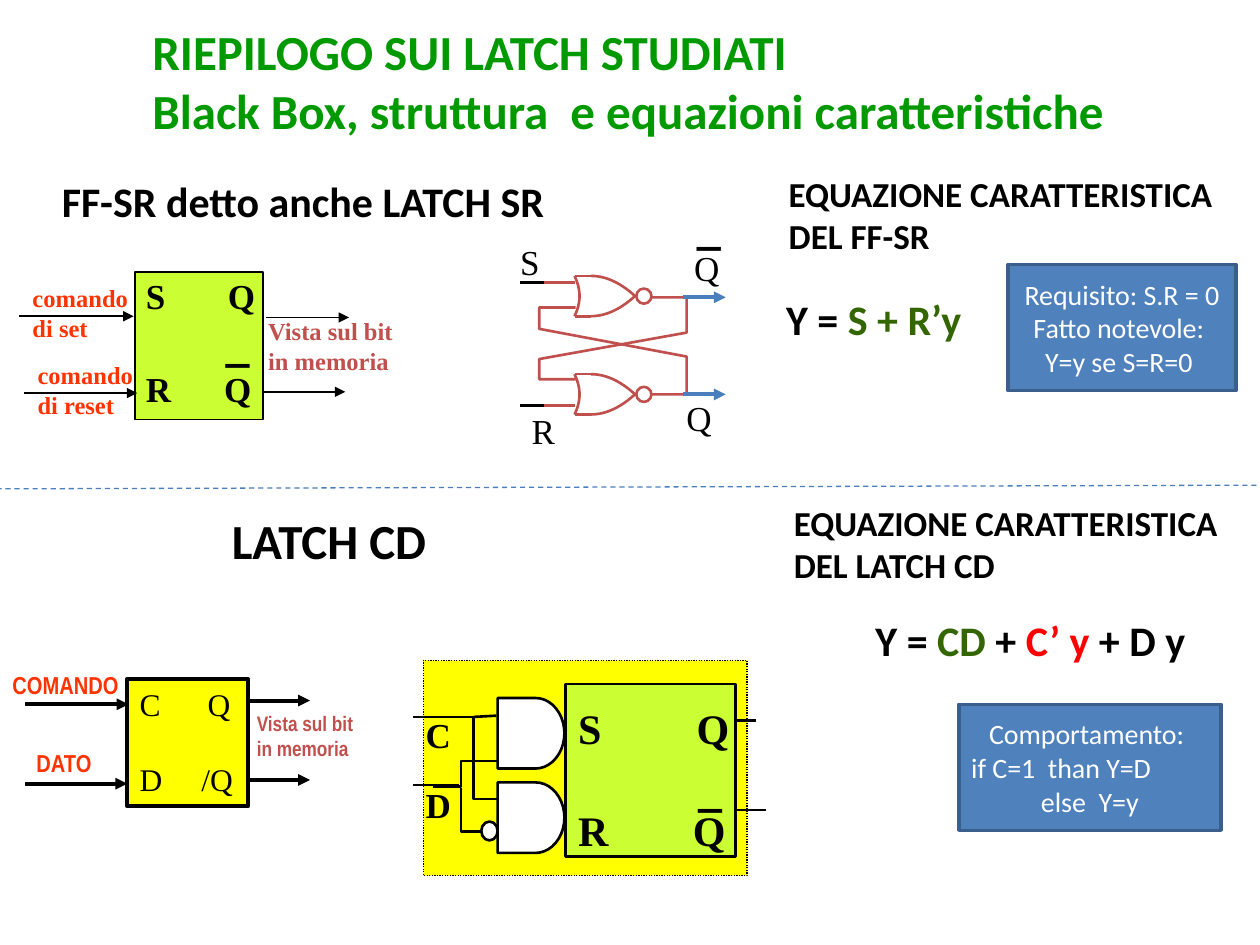
from dataclasses import dataclass
from math import cos, pi, sin

from lxml import etree
from pptx import Presentation
from pptx.dml.color import RGBColor
from pptx.enum.dml import MSO_LINE
from pptx.enum.shapes import MSO_CONNECTOR, MSO_SHAPE
from pptx.enum.text import MSO_ANCHOR, MSO_AUTO_SIZE, PP_ALIGN
from pptx.oxml.ns import qn
from pptx.util import Cm, Pt

RECT, OVAL = MSO_SHAPE.RECTANGLE, MSO_SHAPE.OVAL
STRAIGHT = MSO_CONNECTOR.STRAIGHT
DASH, DOT = MSO_LINE.DASH, MSO_LINE.ROUND_DOT
TOP, MIDDLE = MSO_ANCHOR.TOP, MSO_ANCHOR.MIDDLE
LEFT, CENTER = PP_ALIGN.LEFT, PP_ALIGN.CENTER
GROW = MSO_AUTO_SIZE.SHAPE_TO_FIT_TEXT
CM_PER_INCH = 2.54


@dataclass(frozen=True)
class Theme:
    sans: str = "Calibri"
    serif: str = "Times New Roman"
    narrow: str = "Arial Narrow"
    black: str = "000000"
    white: str = "FFFFFF"
    title: str = "009900"
    green: str = "336600"
    red: str = "FF0000"
    command: str = "FF3300"
    gate: str = "C0504D"
    lime: str = "CCFF33"
    yellow: str = "FFFF00"
    note: str = "4F81BD"
    note_edge: str = "3A5F8C"
    output: str = "4B7EBC"
    huge: int = 28
    large: int = 24
    medium: int = 20
    pin: int = 18
    body: int = 16
    label: int = 14
    small: int = 12


@dataclass(frozen=True)
class Label:
    text: str
    x: float
    y: float
    w: float
    h: float
    fmt: dict


T = Theme()
prs = Presentation()
prs.slide_width, prs.slide_height = Cm(25.4), Cm(19.05)
shapes = prs.slides.add_slide(prs.slide_layouts[6]).shapes


def size(v: float) -> int:
    return Cm(v * CM_PER_INCH)


def rgb(color: str) -> RGBColor:
    return RGBColor.from_string(color)


def write(tf, text, *, pt=T.label, font=T.sans, color=T.black, bold=False,
          align=LEFT, anchor=TOP, inset=True, wrap=True, gap=0, tabs=()) -> None:
    tf.word_wrap, tf.vertical_anchor = wrap, anchor
    if not inset:
        tf.margin_left = tf.margin_right = tf.margin_top = tf.margin_bottom = 0
    lines = text.split("\n") if isinstance(text, str) else [text]
    for i, line in enumerate(lines):
        p = tf.paragraphs[0] if i == 0 else tf.add_paragraph()
        p.alignment = align[i] if isinstance(align, tuple) else align
        if i and gap:
            p.space_before = Pt(gap)
        if tabs:
            tab_list = etree.SubElement(p._p.get_or_add_pPr(), qn("a:tabLst"))
            etree.SubElement(tab_list, qn("a:tab"), pos=str(size(tabs[i])), algn="l")
        for words, tint in [(line, color)] if isinstance(line, str) else line:
            r = p.add_run()
            r.text = words
            r.font.name, r.font.size, r.font.bold = font, Pt(pt), bold
            r.font.color.rgb = rgb(tint)


def add_text(text, x: float, y: float, w: float, h: float, **fmt) -> None:
    tf = shapes.add_textbox(*map(size, (x, y, w, h))).text_frame
    tf.auto_size = GROW
    write(tf, text, **fmt)


def style(s, fill: str | None, edge: str, width: float):
    s.shadow.inherit = False
    if fill:
        s.fill.solid()
        s.fill.fore_color.rgb = rgb(fill)
    else:
        s.fill.background()
    s.line.color.rgb, s.line.width = rgb(edge), Pt(width)
    return s


def add_box(x: float, y: float, w: float, h: float, fill: str | None,
            edge: str = T.black, width: float = 1.5, kind=RECT):
    return style(shapes.add_shape(kind, *map(size, (x, y, w, h))), fill, edge, width)


def add_line(x1: float, y1: float, x2: float, y2: float, color: str = T.black,
             width: float = 1.5, arrow: bool = False, dash=None) -> None:
    s = shapes.add_connector(STRAIGHT, *map(size, (x1, y1, x2, y2)))
    s.line.color.rgb, s.line.width = rgb(color), Pt(width)
    if dash:
        s.line.dash_style = dash
    if arrow:
        etree.SubElement(s.line._get_or_add_ln(), qn("a:tailEnd"), type="triangle")
    etree.SubElement(s._element.spPr, qn("a:effectLst"))


def add_path(points: list, color: str = T.black, fill: str | None = None,
             close: bool = False) -> None:
    pts = [(size(x), size(y)) for x, y in points]
    builder = shapes.build_freeform(*pts[0], scale=1.0)
    builder.add_line_segments(pts[1:], close=close)
    style(builder.convert_to_shape(), fill, color, 1.5)


def and_gate(x: float, y: float) -> None:
    steps, rx, ry = 20, 0.23, 0.28
    arc = [(x + 0.3 + rx * sin(pi * i / steps), y + ry - ry * cos(pi * i / steps))
           for i in range(steps + 1)]
    add_path([(x, y), *arc, (x, y + 2 * ry)], fill=T.white, close=True)


def nor_gate(x: float, y: float) -> None:
    mid, half, steps = y + 0.16, 0.16, 12
    ts = [i / steps for i in range(steps + 1)]
    add_path([(x + 0.04 * (1 - (2 * t - 1) ** 2), y + 2 * half * t) for t in ts], T.gate)
    for side in (-1, 1):
        add_line(x, mid + side * half, x + 0.13, mid + side * half, T.gate)
        add_path([(x + 0.13 + 0.35 * t, mid + side * half * (1 - t * t)) for t in ts], T.gate)
    add_box(x + 0.49, mid - 0.06, 0.12, 0.12, None, T.gate, kind=OVAL)


def draw_labels() -> None:
    head = dict(bold=True, inset=False)
    command = dict(font=T.serif, color=T.command, bold=True, wrap=False)
    narrow = dict(command, font=T.narrow)
    pin = dict(pt=T.medium, font=T.serif, wrap=False)
    bar = dict(pt=T.huge, bold=True, wrap=False)
    view = dict(color=T.gate, bold=True)
    equation = dict(pt=T.large, bold=True)
    labels = [
        Label("RIEPILOGO SUI LATCH STUDIATI\nBlack Box, struttura  e equazioni caratteristiche",
              1.21, 0.17, 8.79, 1.41, dict(head, pt=T.huge, color=T.title)),
        Label("FF-SR detto anche LATCH SR", 0.49, 1.39, 4.85, 0.4, dict(head, pt=T.large)),
        Label("LATCH CD", 1.84, 4.05, 1.83, 0.47, dict(head, pt=T.huge)),
        Label("EQUAZIONE CARATTERISTICA DEL FF-SR", 6.26, 1.37, 3.67, 0.67, dict(head, pt=T.medium)),
        Label("EQUAZIONE CARATTERISTICA DEL LATCH CD", 6.3, 3.98, 3.39, 0.67, dict(head, pt=T.medium)),
        Label("comando\ndi set", 0.16, 2.2, 0.96, 0.57, command),
        Label("comando\ndi reset", 0.2, 2.81, 0.96, 0.57, command),
        Label("COMANDO", 0, 5.27, 1.05, 0.34, narrow),
        Label("DATO", 0.19, 5.89, 0.64, 0.34, narrow),
        Label("Vista sul bit\nin memoria", 2.03, 2.46, 1.33, 0.57, dict(view, font=T.serif)),
        Label("Vista sul bit\nin memoria", 1.94, 5.59, 0.97, 0.5,
              dict(view, font=T.narrow, pt=T.small)),
        Label("S", 4.03, 1.86, 0.2, 0.21, pin),
        Label("R", 4.12, 3.2, 0.22, 0.21, pin),
        Label("Q", 5.35, 3.1, 0.23, 0.21, pin),
        Label("Q", 5.41, 1.91, 0.41, 0.44, pin),
        *(Label("_", x, y, 0.4, 0.57, bar) for x, y in ((1.69, 2.43), (5.43, 1.5), (5.44, 5.96))),
    ]
    for item in labels:
        add_text(item.text, item.x, item.y, item.w, item.h, **item.fmt)
    add_text([("Y = ", T.black), ("S + R’y", T.green)], 6.14, 2.28, 1.75, 0.5, **equation)
    add_text([("Y = ", T.black), ("CD ", T.green), ("+", T.black), (" C’ y ", T.red),
              ("+ D y", T.black)], 6.85, 4.83, 3.33, 0.5, **equation)


def draw_notes() -> None:
    fmt = dict(pt=T.body, color=T.white, anchor=MIDDLE)
    requirement = add_box(8, 2.1, 1.81, 1, T.note, T.note_edge, 2)
    write(requirement.text_frame, "Requisito: S.R = 0\nFatto notevole: \nY=y se S=R=0 ",
          align=CENTER, **fmt)
    behaviour = add_box(7.61, 5.59, 2.08, 1, T.note, T.note_edge, 2)
    write(behaviour.text_frame, "Comportamento: \nif C=1  than Y=D\nelse  Y=y",
          align=(CENTER, LEFT, CENTER), **fmt)


def draw_black_boxes() -> None:
    add_box(1.07, 2.16, 1.02, 1.17, T.lime, width=1)
    add_text("S\tQ\nR\tQ", 1.06, 2.13, 1.07, 1.32, pt=T.medium, font=T.serif,
             bold=True, gap=29, tabs=(0.65, 0.62))
    cd = add_box(1.01, 5.39, 0.96, 1.01, T.yellow, width=2.25)
    write(cd.text_frame, "C\tQ\nD\t/Q", pt=T.pin, font=T.serif, gap=21, tabs=(0.54, 0.49))
    for x1, x2, y in ((0.15, 1.06, 2.51), (0.19, 1.09, 3.12), (2.11, 2.77, 2.52), (2.08, 2.74, 3.11)):
        add_line(x1, y, x2, y, width=1, arrow=True)
    for x1, x2, y in ((0.2, 1.02, 5.59), (0.2, 1.01, 6.22), (1.96, 2.46, 5.56), (1.96, 2.46, 6.19)):
        add_line(x1, y, x2, y, width=2.25, arrow=True)


def draw_sr_circuit() -> None:
    add_path([(5.16, 2.36), (5.45, 2.36), (5.45, 2.64), (4.28, 2.85), (4.28, 3.01), (4.57, 3.01)], T.gate)
    add_path([(5.16, 3.13), (5.45, 3.13), (5.45, 2.83), (4.28, 2.61), (4.28, 2.44), (4.57, 2.44)], T.gate)
    for gate_y, input_y, output_y in ((2.19, 2.24, 2.36), (2.97, 3.22, 3.13)):
        add_line(4.28, input_y, 4.56, input_y, T.gate)
        nor_gate(4.56, gate_y)
        add_line(4.13, input_y, 4.32, input_y)
        add_line(5.42, output_y, 5.76, output_y, T.output, 2.25, arrow=True)


def draw_cd_circuit() -> None:
    add_box(3.36, 5.24, 2.57, 1.71, T.yellow, width=0.75).line.dash_style = DOT
    add_box(4.49, 5.43, 1.35, 1.37, T.lime)
    add_line(5.84, 5.72, 6, 5.72)
    add_line(5.84, 6.43, 6.08, 6.43)
    add_text("S\tQ\nR\tQ", 4.49, 5.53, 1.43, 1.31, pt=T.large, font=T.serif,
             bold=True, gap=29, tabs=(0.94, 0.91))
    for y in (5.54, 6.21):
        and_gate(3.95, y)
    add_line(3.76, 5.69, 3.94, 5.68)
    add_path([(3.44, 6.24), (3.66, 6.24), (3.66, 6.04), (3.95, 6.04)])
    add_box(3.82, 6.52, 0.13, 0.15, T.white, kind=OVAL)
    add_path([(3.66, 6.25), (3.66, 6.6), (3.82, 6.6)])
    add_path([(3.28, 5.69), (3.76, 5.69), (3.76, 6.34), (3.96, 6.34)])
    add_text("C\nD", 3.28, 5.61, 0.38, 1.04, pt=T.medium, font=T.serif, bold=True, gap=16)
    add_line(3.28, 6.23, 3.64, 6.23)


draw_notes()
draw_black_boxes()
draw_sr_circuit()
draw_cd_circuit()
draw_labels()
add_line(-0.1, 3.88, 10.15, 3.85, T.output, 0.75, dash=DASH)
prs.save("out.pptx")
